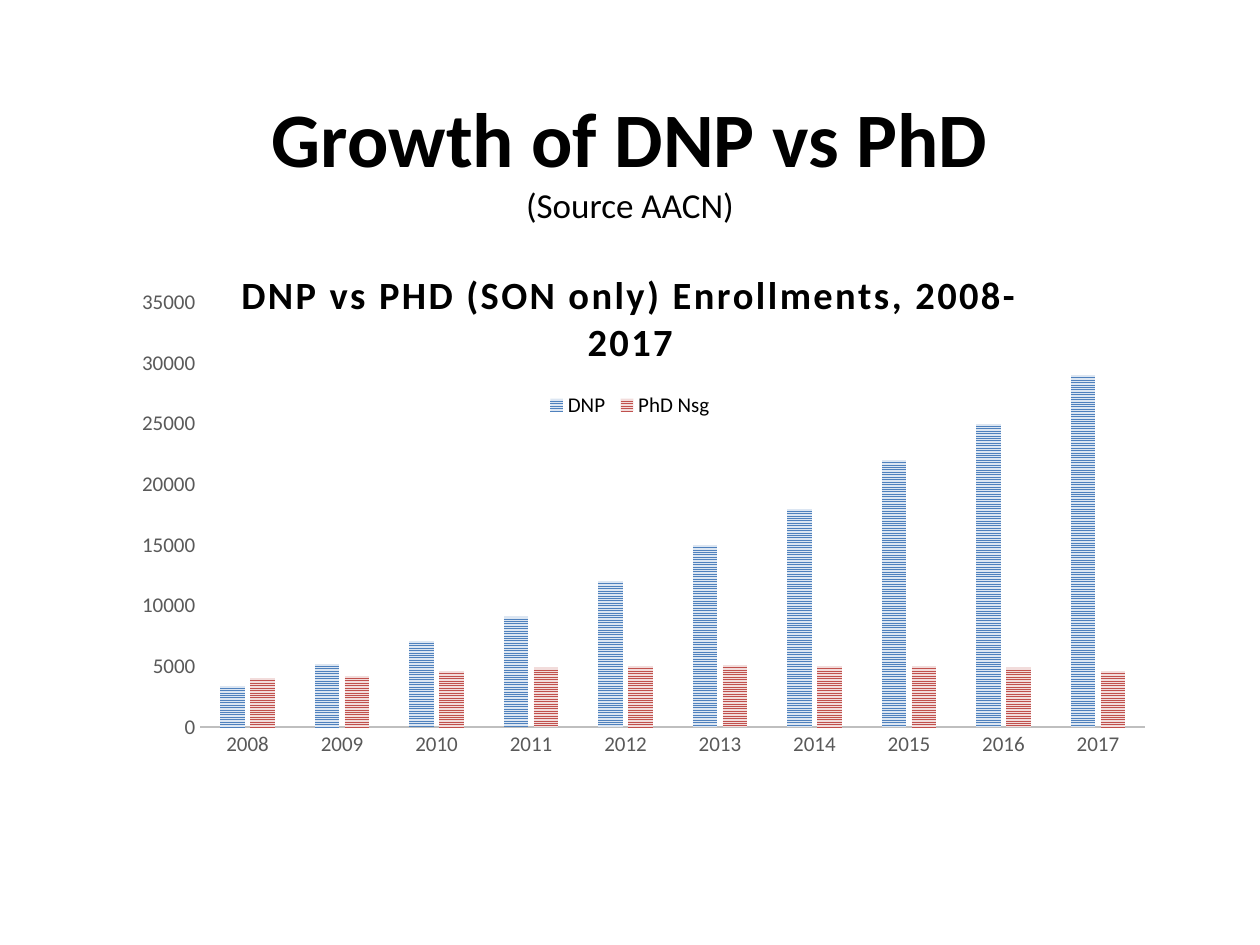
from dataclasses import dataclass

from lxml import etree
from pptx import Presentation
from pptx.chart.data import CategoryChartData
from pptx.dml.color import RGBColor
from pptx.enum.chart import XL_CHART_TYPE as ChartType
from pptx.enum.chart import XL_LEGEND_POSITION as LegendPosition
from pptx.enum.chart import XL_TICK_MARK as TickMark
from pptx.enum.dml import MSO_PATTERN as Pattern
from pptx.enum.text import MSO_ANCHOR as Anchor
from pptx.enum.text import PP_ALIGN as Align
from pptx.oxml.ns import qn
from pptx.util import Inches, Pt


@dataclass(frozen=True)
class Theme:
    font: str = "Calibri"
    ink: str = "000000"
    label: str = "595959"
    axis: str = "BFBFBF"
    dnp: tuple = ("4F81BD", "DCE6F2")
    phd: tuple = ("C0504D", "F2DCDB")
    heading: int = 44
    source: int = 20
    chart_title: int = 22
    chart_text: int = 12


THEME = Theme()
YEARS = [str(year) for year in range(2008, 2018)]
# Two significant digits, as far as the unlabelled columns can be read
ENROLLMENTS = [
    ("DNP", THEME.dnp,
     [3400, 5200, 7100, 9100, 12000, 15000, 18000, 22000, 25000, 29000]),
    ("PhD Nsg", THEME.phd,
     [4000, 4200, 4600, 4900, 5000, 5100, 5000, 5000, 4900, 4600]),
]


def apply(target, values):
    for name, value in values.items():
        setattr(target, name, value)


def style_font(font, size, color=THEME.ink, bold=False):
    apply(font, {"name": THEME.font, "size": Pt(size), "bold": bold})
    font.color.rgb = RGBColor.from_string(color)


def set_layout(element, before, box, target=None, **lengths):
    """Place a chart part by lengths measured from the chart's corner."""
    for old in element.findall(qn("c:layout")):
        element.remove(old)
    layout = etree.Element(qn("c:layout"))
    manual = etree.SubElement(layout, qn("c:manualLayout"))
    if target:
        etree.SubElement(manual, qn("c:layoutTarget"), val=target)
    for side in ("x", "y"):
        etree.SubElement(manual, qn(f"c:{side}Mode"), val="edge")
    _, _, width, height = box
    for side, length in lengths.items():
        whole = width if side in "xw" else height
        etree.SubElement(manual, qn(f"c:{side}"), val=str(length / whole))
    element.find(qn(before)).addprevious(layout)


def add_heading(page, box):
    frame = page.shapes.add_textbox(*box).text_frame
    apply(frame, {"word_wrap": True, "vertical_anchor": Anchor.TOP})
    para = frame.paragraphs[0]
    para.alignment = Align.CENTER
    span = para.add_run()
    span.text = "Growth of DNP vs PhD"
    style_font(span.font, THEME.heading, bold=True)
    para.add_line_break()
    span = para.add_run()
    span.text = "(Source AACN)"
    style_font(span.font, THEME.source)


def add_chart_title(chart, box):
    para = chart.chart_title.text_frame.paragraphs[0]
    span = para.add_run()
    span.text = "DNP vs PHD (SON only) Enrollments, 2008-2017"
    style_font(span.font, THEME.chart_title, bold=True)
    span.font._element.set("spc", "150")
    set_layout(chart.chart_title._element, "c:overlay", box,
               x=Inches(1.03), y=Inches(0.15))
    chart.chart_title.include_in_layout = False


def add_legend(chart, box):
    chart.has_legend = True
    legend = chart.legend
    apply(legend, {"position": LegendPosition.TOP, "include_in_layout": False})
    style_font(legend.font, THEME.chart_text)
    set_layout(legend._element, "c:overlay", box,
               x=Inches(3.47), y=Inches(1.17), w=Inches(1.4), h=Inches(0.25))


def style_axes(chart):
    for axis in (chart.category_axis, chart.value_axis):
        apply(axis, {"major_tick_mark": TickMark.NONE,
                     "minor_tick_mark": TickMark.NONE,
                     "has_major_gridlines": False})
        style_font(axis.tick_labels.font, THEME.chart_text, THEME.label)
    line = chart.category_axis.format.line
    line.width = Pt(1.5)
    line.color.rgb = RGBColor.from_string(THEME.axis)
    chart.value_axis.format.line.fill.background()
    apply(chart.value_axis, {"minimum_scale": 0, "maximum_scale": 35000,
                             "major_unit": 5000})


def add_enrollment_chart(page, box):
    data = CategoryChartData()
    data.categories = YEARS
    for name, _, values in ENROLLMENTS:
        data.add_series(name, values)
    chart = page.shapes.add_chart(ChartType.COLUMN_CLUSTERED, *box, data).chart
    style_font(chart.font, 10)

    # Striped columns
    plot = chart.plots[0]
    apply(plot, {"gap_width": 164, "overlap": -22, "vary_by_categories": False})
    for series, (_, colors, _) in zip(plot.series, ENROLLMENTS):
        fill = series.format.fill
        fill.patterned()
        fill.pattern = Pattern.NARROW_HORIZONTAL
        for part, color in zip((fill.fore_color, fill.back_color), colors):
            part.rgb = RGBColor.from_string(color)

    # Text and axes around the columns
    add_chart_title(chart, box)
    add_legend(chart, box)
    style_axes(chart)
    plot_area = chart._chartSpace.find(".//" + qn("c:plotArea"))
    set_layout(plot_area, "c:barChart", box, target="inner",
               x=Inches(0.76), y=Inches(0.48), w=Inches(7.5), h=Inches(3.37))


def main():
    deck = Presentation()
    apply(deck, {"slide_width": Inches(10), "slide_height": Inches(7.5)})
    page = deck.slides.add_slide(deck.slide_layouts[6])
    add_heading(page, [Inches(n) for n in (0.5, 0.67, 9, 0.92)])
    add_enrollment_chart(page, [Inches(n) for n in (0.83, 1.92, 8.33, 4.91)])
    deck.save("out.pptx")


if __name__ == "__main__":
    main()
